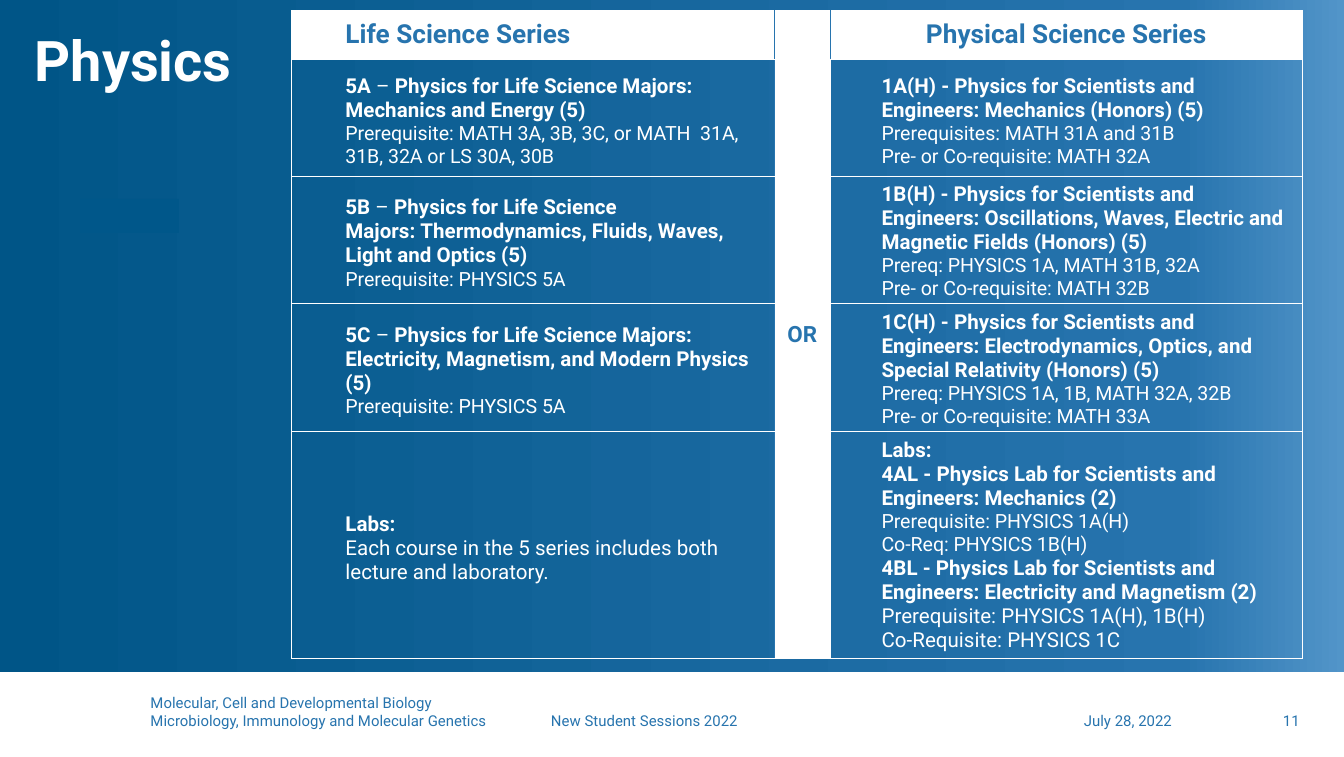
from copy import deepcopy

from lxml import etree
from pptx import Presentation
from pptx.dml.color import RGBColor
from pptx.enum.shapes import MSO_SHAPE
from pptx.enum.text import MSO_ANCHOR, PP_ALIGN
from pptx.oxml.ns import qn
from pptx.util import Inches, Pt

RECTANGLE = MSO_SHAPE.RECTANGLE
TOP, MIDDLE, BOTTOM = MSO_ANCHOR.TOP, MSO_ANCHOR.MIDDLE, MSO_ANCHOR.BOTTOM
LEFT, CENTER, RIGHT = PP_ALIGN.LEFT, PP_ALIGN.CENTER, PP_ALIGN.RIGHT

COLORS = {"navy": "005587", "blue": "2774AE", "sky": "5295C9", "patch": "00578A", "white": "FFFFFF"}
FONT = "Roboto"
WIDTH, HEIGHT = Inches(10), Inches(5.63)
COLUMN, ROW = WIDTH / 100, HEIGHT / 56.3
DASH = " – "
TIE, HARD_SPACE = "~", chr(160)

COLUMN_WIDTHS = [35.9, 4.2, 35.1]
ROW_HEIGHTS = [3.6, 8.7, 8.7, 8.7, 5.6]


def grid_box(left, top, width, height):
    return [round(left * COLUMN), round(top * ROW), round(width * COLUMN), round(height * ROW)]


def rgb(name):
    return RGBColor.from_string(COLORS[name])


def course(text):
    return text, 11, True


def note(text, size=10.5):
    return text, size, False


LIFE_SCIENCE = [
    [course("5A – Physics for Life Science Majors: Mechanics~and Energy (5)"),
     note("Prerequisite: MATH 3A, 3B, 3C, or MATH~ 31A, 31B, 32A or LS 30A, 30B")],
    [course("5B – Physics for Life Science Majors:~Thermodynamics, Fluids, Waves, Light and~Optics (5)"),
     note("Prerequisite: PHYSICS 5A")],
    [course("5C – Physics for Life Science Majors: Electricity,~Magnetism, and Modern Physics (5)"),
     note("Prerequisite: PHYSICS 5A")],
    [course("Labs:"),
     note("Each course in the 5 series includes both lecture and laboratory.", 11)],
]
PHYSICAL_SCIENCE = [
    [course("1A(H) - Physics for Scientists and Engineers:~Mechanics (Honors) (5)"),
     note("Prerequisites: MATH 31A and 31B"),
     note("Pre- or Co-requisite: MATH 32A")],
    [course("1B(H) - Physics for Scientists and Engineers:~Oscillations, Waves, Electric and Magnetic Fields (Honors) (5)"),
     note("Prereq: PHYSICS 1A, MATH 31B, 32A"),
     note("Pre- or Co-requisite: MATH 32B")],
    [course("1C(H) - Physics for Scientists and Engineers:~Electrodynamics, Optics, and Special~Relativity (Honors) (5)"),
     note("Prereq: PHYSICS 1A, 1B, MATH 32A, 32B"),
     note("Pre- or Co-requisite: MATH 33A")],
    [course("Labs:"),
     course("4AL - Physics Lab for Scientists and Engineers:~Mechanics (2)"),
     note("Prerequisite: PHYSICS 1A(H)"),
     note("Co-Req: PHYSICS 1B(H)"),
     course("4BL - Physics Lab for Scientists and Engineers: Electricity and Magnetism (2)"),
     note("Prerequisite: PHYSICS 1A(H), 1B(H)", 11),
     note("Co-Requisite: PHYSICS 1C", 11)],
]


def write_text(frame, paragraphs, color="blue", align=LEFT, indent=0, line_spacing=None):
    frame.word_wrap = True
    for index, (text, size, bold) in enumerate(paragraphs):
        paragraph = frame.add_paragraph() if index else frame.paragraphs[0]
        paragraph.alignment = align
        if line_spacing:
            paragraph.line_spacing = line_spacing
        if indent:
            paragraph.level = 1
            properties = paragraph._p.get_or_add_pPr()
            properties.set("marL", str(Inches(indent)))
            properties.set("indent", "0")
        for part in text.replace(TIE, HARD_SPACE).partition(DASH):
            if part:
                run = paragraph.add_run()
                run.text = part
                run.font.name, run.font.size = FONT, Pt(size)
                run.font.bold = bold and part != DASH
                run.font.color.rgb = rgb(color)


def add_text(slide, box, paragraphs, anchor=BOTTOM, insets=(0, 0.01, 0.1, 0.01), **text_format):
    frame = slide.shapes.add_textbox(*box).text_frame
    frame.margin_left, frame.margin_top, frame.margin_right, frame.margin_bottom = map(Inches, insets)
    frame.vertical_anchor = anchor
    write_text(frame, paragraphs, **text_format)


def add_rectangle(slide, box, color, outlined=False):
    shape = slide.shapes.add_shape(RECTANGLE, *box)
    shape.shadow.inherit = False
    shape.fill.solid()
    shape.fill.fore_color.rgb = rgb(color)
    if outlined:
        shape.line.color.rgb = rgb(color)
        shape.line.width = Pt(0.5)
    else:
        shape.line.fill.background()


def set_borders(cell, **sides):
    properties = cell._tc.get_or_add_tcPr()
    for position, side in enumerate("LRTB"):
        line = etree.Element(qn("a:ln" + side), w=str(Pt(0.5)))
        fill = etree.SubElement(line, qn("a:solidFill"))
        etree.SubElement(fill, qn("a:srgbClr"), val=COLORS[sides.get(side, "white")])
        properties.insert(position, line)


def fill_cell(cell, paragraphs, left=0, top=0, anchor=MIDDLE, **text_format):
    cell.margin_left, cell.margin_top = Inches(left), Inches(top)
    cell.margin_right = cell.margin_bottom = 0
    cell.vertical_anchor = anchor
    write_text(cell.text_frame, paragraphs, **text_format)


def add_background(slide):
    fill = slide.background.fill
    fill.gradient()
    fill.gradient_angle = 0
    stop_list = slide.element.find(".//" + qn("a:gsLst"))
    stop_list.append(deepcopy(stop_list[-1]))
    stops = [("navy", 0), ("blue", 0.88), ("sky", 1)]
    for stop, (color, position) in zip(fill.gradient_stops, stops):
        stop.color.rgb = rgb(color)
        stop.position = position


def add_footer(slide, box):
    left, top, width, height = box
    add_rectangle(slide, grid_box(*box), "white")
    departments = ["Molecular, Cell and Developmental Biology", "Microbiology, Immunology and Molecular Genetics"]
    bottom = top + 0.69 * height
    parts = [
        (0.112, 0.29, 2.8, departments, LEFT),
        (0.41, 0.32, 1.5, ["New Student Sessions 2022"], LEFT),
        (0.732, 0.15, 1.5, ["July 28, 2022"], RIGHT),
        (0.89, 0.087, 1.5, ["11"], RIGHT),
    ]
    for start, share, part_height, lines, align in parts:
        part_box = grid_box(left + start * width, bottom - part_height, share * width, part_height)
        add_text(slide, part_box, [(line, 8, False) for line in lines], align=align)


def add_course_table(slide, box):
    shape = slide.shapes.add_table(len(ROW_HEIGHTS), len(COLUMN_WIDTHS), *grid_box(*box))
    table = shape.table
    table.first_row = table.horz_banding = False
    for column, width in zip(table.columns, COLUMN_WIDTHS):
        column.width = round(width * COLUMN)
    for row, height in zip(table.rows, ROW_HEIGHTS):
        row.height = round(height * ROW)
    shape.height = round(box[3] * ROW)
    for row in range(len(ROW_HEIGHTS)):
        for column in range(len(COLUMN_WIDTHS)):
            cell = table.cell(row, column)
            if row == 0 or column == 1:
                cell.fill.solid()
                cell.fill.fore_color.rgb = rgb("white")
            else:
                cell.fill.background()
            inner_sides = ["R", "LR", "L"][column] if row == 0 else ""
            set_borders(cell, **{side: "blue" for side in inner_sides})
    table.cell(0, 1).merge(table.cell(len(ROW_HEIGHTS) - 1, 1))
    fill_cell(table.cell(0, 0), [("Life Science Series", 14, True)], left=0.4)
    fill_cell(table.cell(0, 1), [("OR", 12, True)], align=CENTER)
    fill_cell(table.cell(0, 2), [("Physical Science Series", 14, True)], align=CENTER)
    for row, (life, physical) in enumerate(zip(LIFE_SCIENCE, PHYSICAL_SCIENCE), 1):
        fill_cell(table.cell(row, 0), life, left=0.4, top=0.05, color="white")
        fill_cell(table.cell(row, 2), physical, top=0.05, anchor=MIDDLE if row == 1 else TOP,
                  color="white", indent=0.38)


def main():
    presentation = Presentation()
    presentation.slide_width, presentation.slide_height = WIDTH, HEIGHT
    slide = presentation.slides.add_slide(presentation.slide_layouts[6])
    add_background(slide)
    add_footer(slide, (0, 50, 100, 6.3))
    add_text(slide, grid_box(1.6, 2, 80, 5.6), [("Physics", 30, True)], anchor=TOP,
             insets=(0.1, 0.05, 0.1, 0.05), color="white", line_spacing=0.9)
    add_course_table(slide, (21.7, 0.8, sum(COLUMN_WIDTHS), 48))
    add_rectangle(slide, grid_box(6, 14.8, 7.3, 2.5), "patch", outlined=True)
    presentation.save("out.pptx")


if __name__ == "__main__":
    main()
